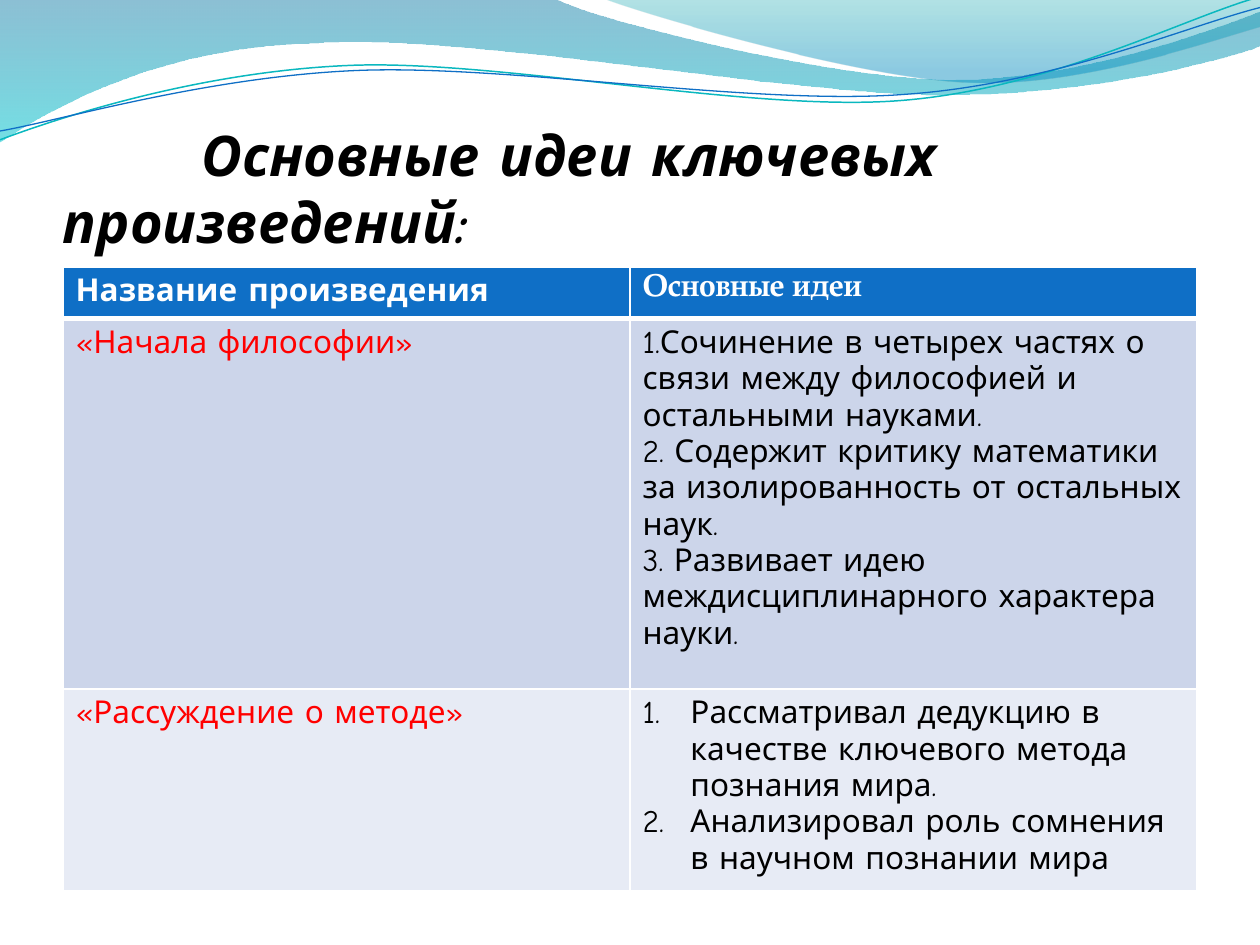
from dataclasses import dataclass
from lxml.etree import SubElement as Sub
from pptx import Presentation
from pptx.dml.color import RGBColor as Rgb
from pptx.enum.text import MSO_ANCHOR as Anchor
from pptx.oxml.ns import qn
from pptx.util import Inches, Pt


@dataclass(frozen=True)
class Theme:
    font: str = "Comic Neue"
    serif: str = "TeX Gyre Pagella"
    black: str = "000000"
    white: str = "FFFFFF"
    red: str = "FF0000"
    blue: str = "0F6FC6"
    teal: str = "0AB8BF"
    bands: tuple = ("CCD5EA", "E7EBF5")
    wide: tuple = ((0, "0074A1", 45), (1, "00C6CF", 55))
    slim: tuple = ((0, "00A1A9", 30), (0.8, "008BBF", 45))
    head: int = 32
    body: int = 18


T = Theme()

WIDE = [(0, 0), (4.4, -0.01),
        (4.76, 0.17, 6.64, 0.63, 7.58, 0.63), (8.53, 0.63, 9.58, 0.26, 10, 0.09),
        (10.01, 0.36),
        (9.83, 0.44, 8.7, 0.76, 7.46, 0.75), (6.22, 0.75, 3.82, 0.28, 2.57, 0.34),
        (1.29, 0.36, 0.46, 0.83, -0.01, 1.13)]
SLIM = [(4.79, -0.01), (5.09, 0.11, 6.82, 0.62, 7.69, 0.65),
        (8.56, 0.69, 9.61, 0.32, 10, 0.21), (10, 0)]
TEAL = [(0, 1.11), (0.48, 0.93, 1.58, 0.57, 2.77, 0.52),
        (3.95, 0.47, 5.93, 0.89, 7.13, 0.8), (8.33, 0.71, 9.38, 0.15, 9.98, -0.02)]
BLUE = [(0, 1.04), (0.47, 0.96, 1.64, 0.61, 2.83, 0.56),
        (4.03, 0.51, 5.97, 0.84, 7.17, 0.75), (8.36, 0.67, 9.41, 0.21, 10, 0.06)]

ROWS = [
    ("«Начала философии»", False, [
        "1.Сочинение в четырех частях о связи между философией и остальными науками.",
        "2. Содержит критику математики за изолированность от остальных наук.",
        "3. Развивает идею междисциплинарного характера науки."]),
    ("«Рассуждение о методе»", True, [
        "Рассматривал дедукцию в качестве ключевого метода познания мира.",
        "Анализировал роль сомнения в научном познании мира"]),
]


def bend(shape, steps):
    legs = iter(list(shape.element.spPr.iter(qn("a:lnTo"))))
    for step in steps[1:]:
        first = next(legs)
        if len(step) == 6:
            first.tag = qn("a:cubicBezTo")
            for leg in (next(legs), next(legs)):
                first.append(leg[0])
                leg.getparent().remove(leg)


def draw(slide, box, steps, close):
    dots = [(Inches(box[0] + x), Inches(box[1] + y))
            for step in steps for x, y in zip(step[::2], step[1::2])]
    pen = slide.shapes.build_freeform(*dots[0], scale=1.0)
    pen.add_line_segments(dots[1:], close=close)
    shape = pen.convert_to_shape()
    bend(shape, steps)
    shape.shadow.inherit = False
    return shape


def add_waves(slide, box):
    for steps, stops in ((WIDE, T.wide), (SLIM, T.slim)):
        wave = draw(slide, box, steps, True)
        wave.line.fill.background()
        wave.fill.gradient()
        wave.fill.gradient_angle = 270
        for stop, (place, color, alpha) in zip(wave.fill.gradient_stops, stops):
            stop.position = place
            stop.color.rgb = Rgb.from_string(color)
        tints = wave.element.spPr.iter(qn("a:srgbClr"))
        for tint, stop in zip(tints, stops):
            Sub(tint, qn("a:alpha"), val=str(stop[2] * 1000))
    for steps, color, width in ((TEAL, T.teal, 0.85), (BLUE, T.blue, 0.75)):
        curve = draw(slide, box, steps, False)
        curve.fill.background()
        curve.line.color.rgb = Rgb.from_string(color)
        curve.line.width = Pt(width)


def add_run(para, text, size, color, font=T.font, bold=False, italic=False):
    run = para.add_run()
    run.text = text
    run.font.size, run.font.name = Pt(size), font
    run.font.bold, run.font.italic = bold, italic
    run.font.color.rgb = Rgb.from_string(color)


def add_title(slide, box):
    frame = slide.shapes.add_textbox(*map(Inches, box)).text_frame
    frame.word_wrap = True
    frame.vertical_anchor = Anchor.BOTTOM
    frame.margin_left = frame.margin_right = frame.margin_bottom = 0
    para = frame.paragraphs[0]
    para._p.get_or_add_pPr().set("indent", str(Inches(1.1)))
    add_run(para, "Основные идеи ключевых произведений:", T.head, T.black,
            bold=True, italic=True)


def paint(cell, color, base=1):
    props = cell._tc.get_or_add_tcPr()
    for side, width in (("L", 1), ("R", 1), ("T", 1), ("B", base)):
        edge = Sub(props, qn(f"a:ln{side}"), w=str(Pt(width)))
        Sub(Sub(edge, qn("a:solidFill")), qn("a:srgbClr"), val=T.white)
    cell.fill.solid()
    cell.fill.fore_color.rgb = Rgb.from_string(color)


def number(para):
    props = para._p.get_or_add_pPr()
    props.set("marL", str(Inches(0.38)))
    props.set("indent", str(Inches(-0.38)))
    Sub(props, qn("a:buFont"), typeface=T.font)
    Sub(props, qn("a:buAutoNum"), type="arabicPeriod")


def add_ideas(slide, box, highs):
    frame = slide.shapes.add_table(len(highs), 2, *map(Inches, box))
    grid = frame.table
    for row, high in zip(grid.rows, highs):
        row.height = Inches(high)
    frame.height = Inches(box[3])
    heads = (("Название произведения", T.font), ("Основные идеи", T.serif))
    for col, (text, font) in enumerate(heads):
        cell = grid.cell(0, col)
        paint(cell, T.blue, 3)
        add_run(cell.text_frame.paragraphs[0], text, T.body, T.white, font, True)
    for i, (name, listed, ideas) in enumerate(ROWS):
        left, right = grid.cell(i + 1, 0), grid.cell(i + 1, 1)
        for cell in (left, right):
            paint(cell, T.bands[i])
        add_run(left.text_frame.paragraphs[0], name, T.body, T.red)
        words = right.text_frame
        for j, idea in enumerate(ideas):
            para = words.add_paragraph() if j else words.paragraphs[0]
            if listed:
                number(para)
            add_run(para, idea, T.body, T.black)


def main():
    deck = Presentation()
    deck.slide_width, deck.slide_height = Inches(10), Inches(7.5)
    slide = deck.slides.add_slide(deck.slide_layouts[6])
    add_waves(slide, (0, 0))
    add_title(slide, (0.5, 0.77, 9, 1.25))
    add_ideas(slide, (0.5, 2.12, 9, 5.11), (0.41, 2.94, 0.41))
    deck.save("out.pptx")


if __name__ == "__main__":
    main()
